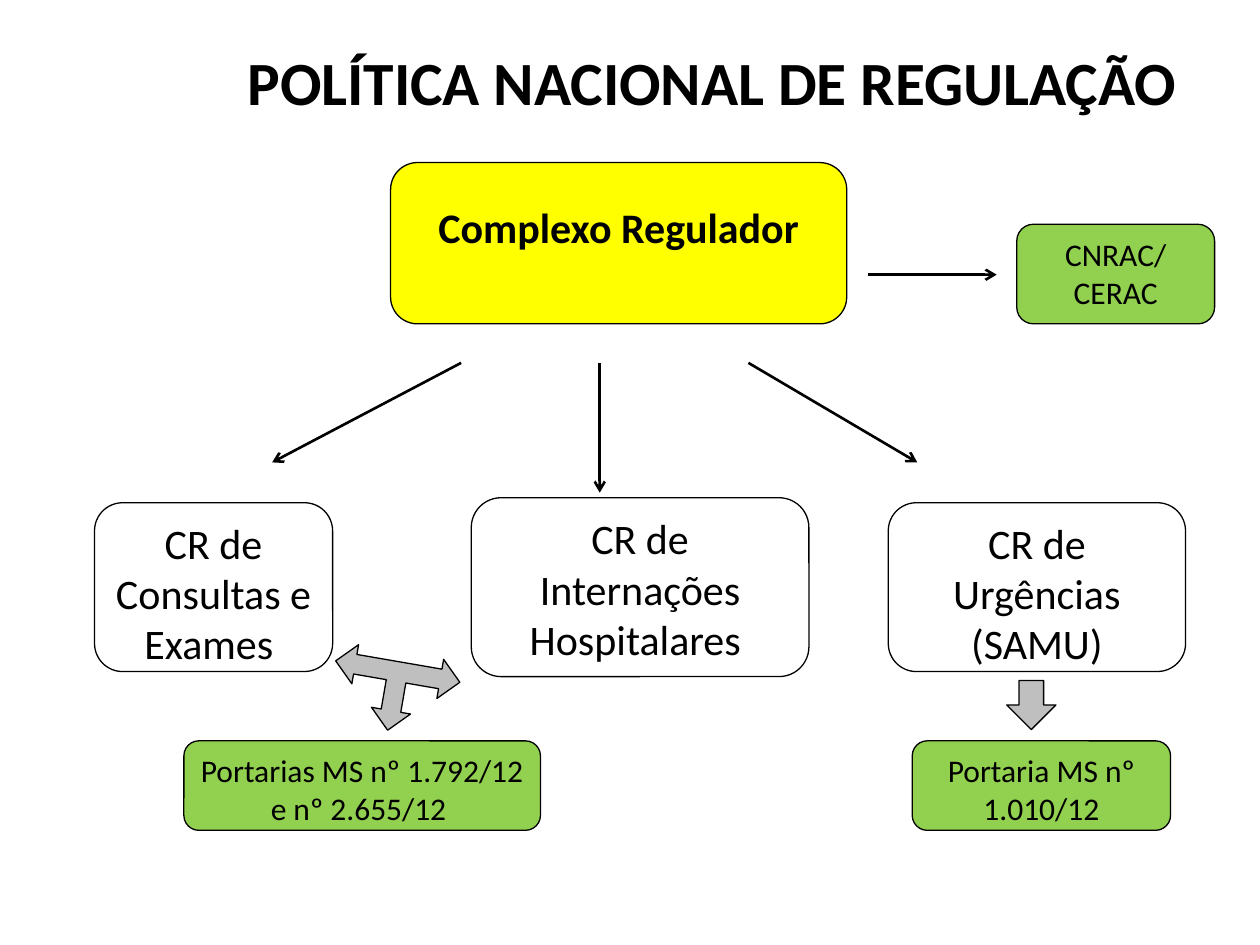
from lxml import etree
from pptx import Presentation, util as u
from pptx.dml.color import RGBColor
from pptx.enum import shapes, text
from pptx.oxml.ns import qn

THEME = {
    "font": "Calibri",
    "ink": "000000", "white": "FFFFFF", "yellow": "FFFF00",
    "green": "92D050", "grey": "BFBFBF",
    "title": 35.1, "unit": 24, "note": 18,
    "outline": 0.75, "arrow": 1.5,
}

# Grid of 100 columns by 75 rows; places are (column, row, columns, rows).
COLS, ROWS = 100, 75
NOTE_ROW, NOTE_H = 58.8, 7.1
ARROW_TOP, ARROW_END = 28.8, 36.7
HUB_BOTTOM = 25.7
SIDE_ROW = 21.8

TITLE = ("POLÍTICA NACIONAL DE REGULAÇÃO ", (16.9, 1.3, 80.3, 10.2))

# text, place, fill, size, extra formats
BOXES = [
    ("CR de Consultas e Exames ", (7.5, 39.9, 18.9, 13.4), "white", "unit", {}),
    ("CR de Internações Hospitalares ", (37.4, 39.5, 26.8, 14.2), "white", "unit", {}),
    ("CR de Urgências (SAMU)", (70.5, 39.9, 23.6, 13.4), "white", "unit", {}),
    ("Portarias MS nº 1.792/12 e nº 2.655/12 ", (14.6, NOTE_ROW, 28.3, NOTE_H),
     "green", "note", {}),
    ("Portaria MS nº 1.010/12", (72.4, NOTE_ROW, 20.5, NOTE_H), "green", "note", {}),
    ("CNRAC/ CERAC", (80.7, HUB_BOTTOM - 7.9, 15.7, 7.9), "green", "note", {}),
    ("Complexo Regulador", (31, HUB_BOTTOM - 12.8, 36.2, 12.8), "yellow", "unit",
     {"bold": True, "line_spacing": 1.5}),
]

# from column, from row, to column, to row
ARROWS = [
    (36.6, ARROW_TOP, 21.6, ARROW_END),
    (47.6, ARROW_TOP, 47.6, 39.1),
    (59.4, ARROW_TOP, 72.8, ARROW_END),
    (68.9, SIDE_ROW, 79.1, SIDE_ROW),
]

# shape, place, rotation
BLOCK_ARROWS = [
    (shapes.MSO_SHAPE.LEFT_RIGHT_UP_ARROW, (26.3, 51.7, 10, 6.3), 189.8),
    (shapes.MSO_SHAPE.DOWN_ARROW, (79.9, 54, 3.9, 3.9), 0),
]

prs = Presentation()
prs.slide_width, prs.slide_height = u.Inches(10), u.Inches(7.5)
s = prs.slides.add_slide(prs.slide_layouts[6])


def grid(*values):
    """Turn alternating columns and rows into slide lengths."""
    steps = (prs.slide_width / COLS, prs.slide_height / ROWS)
    return [u.Emu(round(v * steps[i % 2])) for i, v in enumerate(values)]


def color(name):
    return RGBColor.from_string(THEME[name])


def write(sp, words, size, anchor, bold=False, line_spacing=None):
    tf = sp.text_frame
    tf.word_wrap, tf.vertical_anchor = True, anchor
    p = tf.paragraphs[0]
    p.alignment, p.line_spacing = text.PP_ALIGN.CENTER, line_spacing
    r = p.add_run()
    r.text = words
    formats = {"name": THEME["font"], "size": u.Pt(THEME[size]), "bold": bold}
    for key, value in formats.items():
        setattr(r.font, key, value)
    r.font.color.rgb = color("ink")


def add_block(kind, place, fill):
    sp = s.shapes.add_shape(kind, *grid(*place))
    sp.shadow.inherit = False
    sp.fill.solid()
    sp.fill.fore_color.rgb = color(fill)
    sp.line.color.rgb = color("ink")
    sp.line.width = u.Pt(THEME["outline"])
    return sp


def add_arrow(ends):
    c = s.shapes.add_connector(shapes.MSO_CONNECTOR.STRAIGHT, *grid(*ends))
    c.line.color.rgb = color("ink")
    c.line.width = u.Pt(THEME["arrow"])
    etree.SubElement(c.line._get_or_add_ln(), qn("a:tailEnd"), type="arrow")
    etree.SubElement(c._element.spPr, qn("a:effectLst"))


for ends in ARROWS:
    add_arrow(ends)

for words, place, fill, size, formats in BOXES:
    box = add_block(shapes.MSO_SHAPE.ROUNDED_RECTANGLE, place, fill)
    write(box, words, size, text.MSO_ANCHOR.TOP, **formats)

for kind, place, turn in BLOCK_ARROWS:
    add_block(kind, place, "grey").rotation = turn

words, place = TITLE
write(s.shapes.add_textbox(*grid(*place)), words, "title",
      text.MSO_ANCHOR.MIDDLE, bold=True)

prs.save("out.pptx")
